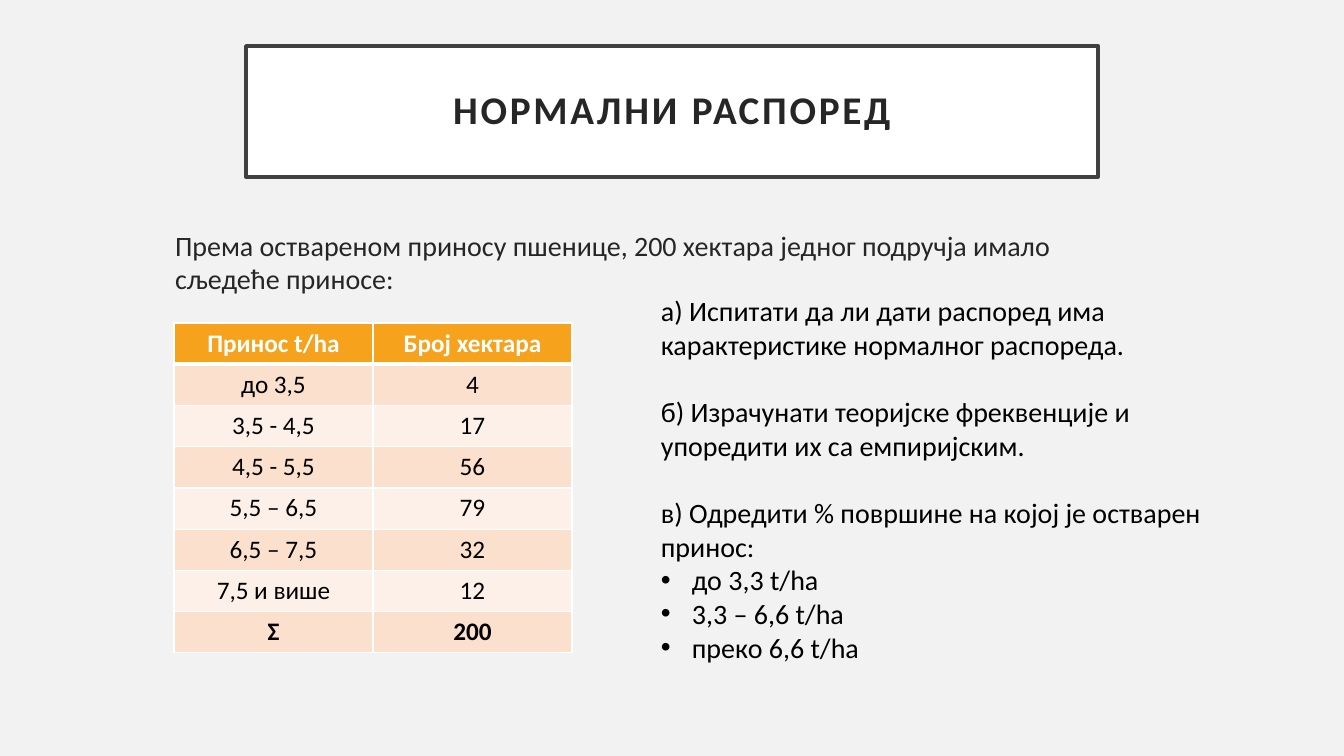
import pptx
import pptx.dml.color
import pptx.enum.text
import pptx.oxml
import pptx.oxml.ns
import pptx.util
from dataclasses import dataclass

ALIGN = pptx.enum.text.PP_ALIGN
ANCHOR = pptx.enum.text.MSO_ANCHOR


@dataclass(frozen=True)
class Theme:
    """Colours, font and type sizes of the slide."""
    font: str = "Calibri"
    background: str = "F2F2F2"
    white: str = "FFFFFF"
    black: str = "000000"
    ink: str = "262626"
    frame: str = "404040"
    header: str = "F6A21D"
    bands: tuple = ("FBE0CD", "FDF0E8")
    title_size: int = 28
    text_size: int = 20
    table_size: int = 18


class ExerciseSlide:
    PX = 12192000 / 1344

    def __init__(self, deck, theme):
        self.theme = theme
        self.slide = deck.slides.add_slide(deck.slide_layouts[1])
        self.paint(self.slide.background.fill, theme.background)

    def px(self, length):
        return pptx.util.Emu(round(length * self.PX))

    def paint(self, fill, colour):
        fill.solid()
        fill.fore_color.rgb = pptx.dml.color.RGBColor.from_string(colour)

    def apply(self, target, formats):
        for name, value in formats.items():
            setattr(target, name, value)

    def place(self, shape, box):
        names = ("left", "top", "width", "height")
        self.apply(shape, dict(zip(names, map(self.px, box))))

    def add_text(self, paragraph, text, size, colour, bold=False, **formats):
        self.apply(paragraph, formats)
        run = paragraph.add_run()
        run.text = text
        self.apply(run.font, {"name": self.theme.font, "bold": bold,
                              "size": pptx.util.Pt(size)})
        self.paint(run.font.fill, colour)
        return run

    def bullet(self, paragraph, char=None, indent=0):
        props = paragraph._p.get_or_add_pPr()
        props.set("marL", str(self.px(indent)))
        props.set("indent", str(-self.px(indent)))
        tag = f'a:buChar char="{char}"' if char else "a:buNone"
        if char:
            props.append(pptx.oxml.parse_xml(
                f'<a:buFont {pptx.oxml.ns.nsdecls("a")} typeface="Arial"/>'))
        props.append(pptx.oxml.parse_xml(
            f'<{tag} {pptx.oxml.ns.nsdecls("a")}/>'))

    def title(self, text, box):
        title = self.slide.shapes.title
        self.place(title, box)
        self.paint(title.fill, self.theme.white)
        self.paint(title.line.fill, self.theme.frame)
        title.line.width = pptx.util.Pt(2.5)
        sides = ("margin_left", "margin_top", "margin_right", "margin_bottom")
        self.apply(title.text_frame, {
            **dict.fromkeys(sides, self.px(20)), "word_wrap": True,
            "vertical_anchor": ANCHOR.MIDDLE,
            "auto_size": pptx.enum.text.MSO_AUTO_SIZE.NONE})
        run = self.add_text(title.text_frame.paragraphs[0], text,
                            self.theme.title_size, self.theme.ink, True,
                            alignment=ALIGN.CENTER, line_spacing=0.9)
        run.font._element.set("spc", "200")

    def body(self, text, box):
        body = self.slide.placeholders[1]
        self.place(body, box)
        self.apply(body.text_frame, {
            "word_wrap": True, "vertical_anchor": ANCHOR.TOP,
            "auto_size": pptx.enum.text.MSO_AUTO_SIZE.NONE})
        paragraph = body.text_frame.paragraphs[0]
        self.bullet(paragraph)
        self.add_text(paragraph, text, self.theme.text_size, self.theme.ink,
                      alignment=ALIGN.LEFT, space_before=pptx.util.Pt(0))

    def questions(self, questions, answers, box):
        frame = self.slide.shapes.add_textbox(*map(self.px, box)).text_frame
        frame.word_wrap = True
        items = [(text, False) for text in questions]
        items += [(text, True) for text in answers]
        for index, (text, bulleted) in enumerate(items):
            paragraph = frame.add_paragraph() if index else frame.paragraphs[0]
            if bulleted:
                self.bullet(paragraph, "•", 31)
            gap = 24 if index and not bulleted else 0
            self.add_text(paragraph, text, self.theme.text_size,
                          self.theme.black, space_before=pptx.util.Pt(gap),
                          line_spacing=pptx.util.Pt(24))

    def borders(self, cell, bottom):
        props = cell._tc.get_or_add_tcPr()
        for side, width in (("L", 1), ("R", 1), ("T", 1), ("B", bottom)):
            props.append(pptx.oxml.parse_xml(
                f'<a:ln{side} {pptx.oxml.ns.nsdecls("a")} w="{width * 12700}">'
                f'<a:solidFill><a:srgbClr val="{self.theme.white}"/>'
                f'</a:solidFill></a:ln{side}>'))

    def table(self, rows, box):
        theme = self.theme
        last = len(rows) - 1
        table = self.slide.shapes.add_table(
            len(rows), len(rows[0]), *map(self.px, box)).table
        for row in table.rows:
            row.height = self.px(box[3] / len(rows))
        for r, values in enumerate(rows):
            for c, text in enumerate(values):
                cell = table.cell(r, c)
                self.borders(cell, 1 if r else 3)
                self.paint(cell.fill,
                           theme.bands[(r - 1) % 2] if r else theme.header)
                self.add_text(cell.text_frame.paragraphs[0], text,
                              theme.table_size,
                              theme.black if r else theme.white,
                              r in (0, last), alignment=ALIGN.CENTER)


def main():
    deck = pptx.Presentation()
    deck.slide_width = pptx.util.Emu(12192000)
    deck.slide_height = pptx.util.Emu(6858000)
    exercise = ExerciseSlide(deck, Theme())

    # Title and introduction
    exercise.title("НОРМАЛНИ РАСПОРЕД", (246, 46, 852, 131))
    exercise.body("Према оствареном приносу пшенице, 200 хектара једног "
                  "подручја имало сљедеће приносе:", (165, 223, 993, 342))

    # Yield distribution
    exercise.table([
        ("Принос t/ha", "Број хектара"),
        ("до 3,5", "4"),
        ("3,5 - 4,5", "17"),
        ("4,5 - 5,5", "56"),
        ("5,5 – 6,5", "79"),
        ("6,5 – 7,5", "32"),
        ("7,5 и више", "12"),
        ("Σ", "200"),
    ], (174, 323, 398, 330))

    # Questions with the yield ranges
    exercise.questions(
        ["а) Испитати да ли дати распоред има карактеристике нормалног "
         "распореда.",
         "б) Израчунати теоријске фреквенције и упоредити их са емпиријским.",
         "в) Одредити % површине на којој је остварен принос:"],
        ["до 3,3 t/ha", "3,3 – 6,6 t/ha", "преко 6,6 t/ha"],
        (651, 289, 586, 380))

    deck.save("out.pptx")


if __name__ == "__main__":
    main()
